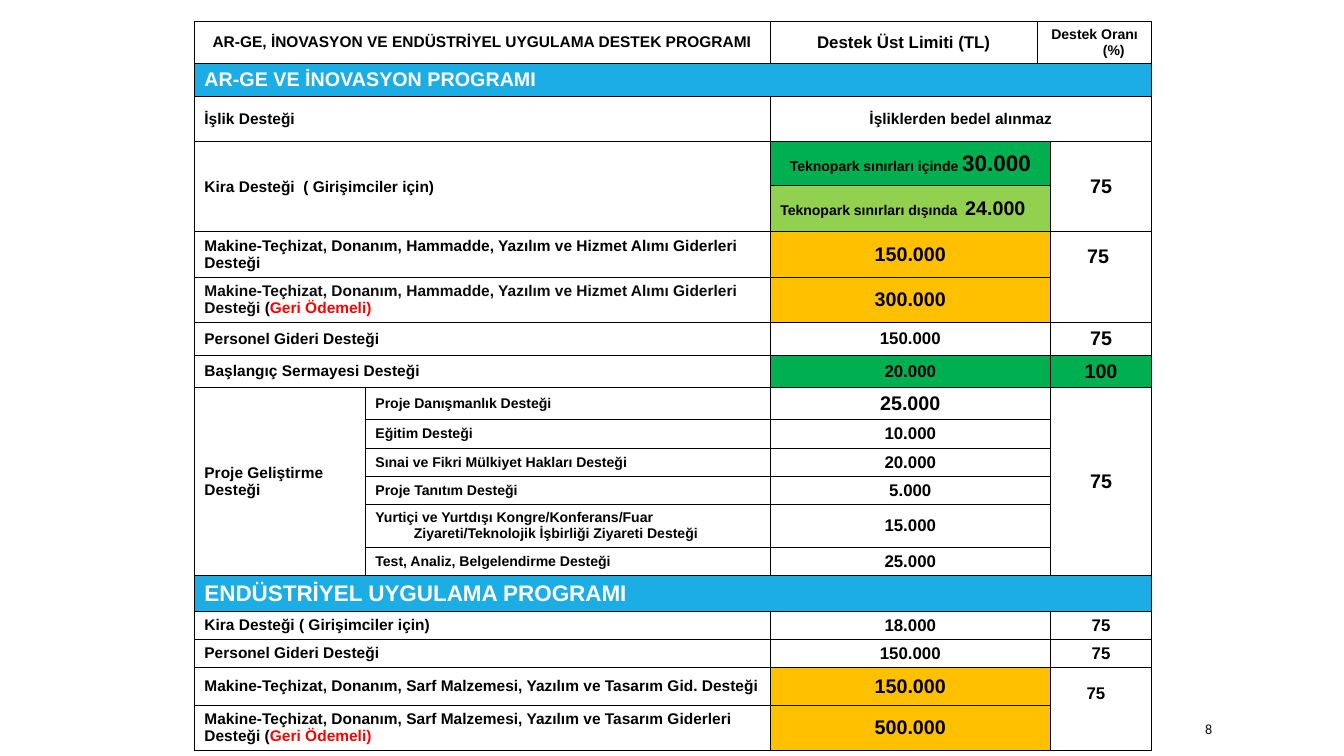
from dataclasses import dataclass

from lxml import etree
from pptx import Presentation
from pptx.dml.color import RGBColor
from pptx.enum.text import MSO_ANCHOR, PP_ALIGN
from pptx.oxml.ns import qn
from pptx.util import Inches, Pt

LEFT, CENTER = PP_ALIGN.LEFT, PP_ALIGN.CENTER
MIDDLE = MSO_ANCHOR.MIDDLE


@dataclass(frozen=True)
class Theme:
    font: str = "Arial"
    number_font: str = "Calibri"
    black: str = "000000"
    ink: str = "0D0D0D"
    white: str = "FFFFFF"
    red: str = "FF0000"
    blue: str = "1CADE4"
    green: str = "00B050"
    lime: str = "92D050"
    amber: str = "FFC000"
    small: int = 10
    label: int = 11
    normal: int = 12
    large: int = 14
    huge: int = 16


T = Theme()


@dataclass
class Run:
    text: str
    size: int = T.label
    color: str = T.black


@dataclass
class Cell:
    col: int
    paragraphs: list
    align: int = LEFT
    fill: str = ""
    rows: int = 1
    cols: int = 1
    pad_right: float = 0
    pad_bottom: float = 0


def label(*lines, rows=1, cols=2):
    """Left-hand name of a support; each line is a string or a list of runs."""
    return Cell(0, [[Run(x)] if isinstance(x, str) else x for x in lines], rows=rows, cols=cols)


def centred(col, text, size, **options):
    return Cell(col, [[Run(text, size)]], CENTER, **options)


def amount(text, size=T.normal, fill=""):
    return centred(2, text, size, fill=fill, cols=2)


def rate(text, size=T.large, **options):
    return centred(4, text, size, **options)


def banner(text, size):
    return Cell(0, [[Run(text, size, T.white)]], fill=T.blue, cols=5)


def item(text):
    """Entry of the project development group."""
    return Cell(1, [[Run(text, T.small)]])


COLS = [1.69, 4, 2.64, 0.13, 1]
MACHINES = "Makine-Teçhizat, Donanım, Hammadde, Yazılım ve Hizmet Alımı Giderleri"
MATERIALS = "Makine-Teçhizat, Donanım, Sarf Malzemesi, Yazılım ve Tasarım"
REPAID = Run("Geri Ödemeli)", color=T.red)

ROWS = [
    (0.42, [centred(0, "AR-GE, İNOVASYON VE ENDÜSTRİYEL UYGULAMA DESTEK PROGRAMI", T.label, cols=2),
            centred(2, "Destek Üst Limiti (TL)", T.normal),
            centred(3, "Destek Oranı (%)", T.small, cols=2)]),
    (0.32, [banner("AR-GE VE İNOVASYON PROGRAMI", T.large)]),
    (0.45, [label("İşlik Desteği"), centred(2, "İşliklerden bedel alınmaz", T.label, cols=3)]),
    (0.43, [label("Kira Desteği  ( Girişimciler için)", rows=2),
            Cell(2, [[Run("Teknopark sınırları içinde ", T.small), Run("30.000", T.huge)]],
                 CENTER, T.green, cols=2),
            rate("75", rows=2)]),
    (0.46, [Cell(2, [[Run("Teknopark sınırları dışında  ", T.small), Run("24.000", T.large)]],
                 fill=T.lime, cols=2)]),
    (0.45, [label(MACHINES, "Desteği"), amount("150.000", T.large, T.amber),
            rate("75", rows=2, pad_right=0.06, pad_bottom=0.4)]),
    (0.45, [label([Run(MACHINES, color=T.ink)], [Run("Desteği", color=T.ink), Run(" ("), REPAID]),
            amount("300.000", T.large, T.amber)]),
    (0.32, [label("Personel Gideri Desteği"), amount("150.000"), rate("75")]),
    (0.32, [label("Başlangıç Sermayesi Desteği"), amount("20.000", fill=T.green),
            rate("100", fill=T.green)]),
    (0.32, [label("Proje Geliştirme", "Desteği", rows=6, cols=1),
            item("Proje Danışmanlık Desteği"), amount("25.000", T.large), rate("75", rows=6)]),
    (0.28, [item("Eğitim Desteği"), amount("10.000")]),
    (0.28, [item("Sınai ve Fikri Mülkiyet Hakları Desteği"), amount("20.000")]),
    (0.28, [item("Proje Tanıtım Desteği"), amount("5.000")]),
    (0.42, [item("Yurtiçi ve Yurtdışı Kongre/Konferans/Fuar Ziyareti/Teknolojik İşbirliği "
                 "Ziyareti Desteği"), amount("15.000")]),
    (0.28, [item("Test, Analiz, Belgelendirme Desteği"), amount("25.000")]),
    (0.35, [banner("ENDÜSTRİYEL UYGULAMA PROGRAMI", T.huge)]),
    (0.28, [label("Kira Desteği ( Girişimciler için)"), amount("18.000"), rate("75", T.normal)]),
    (0.28, [label("Personel Gideri Desteği"), amount("150.000"), rate("75", T.normal)]),
    (0.37, [label(MATERIALS + " Gid. Desteği"), amount("150.000", T.large, T.amber),
            rate("75", T.normal, rows=2, pad_right=0.1, pad_bottom=0.3)]),
    (0.45, [label(MATERIALS + " Giderleri", [Run("Desteği ("), REPAID]),
            amount("500.000", T.large, T.amber)]),
]


def add_run(p, text, size, color, font, bold):
    r = p.add_run()
    r.text = text
    r.font.size, r.font.name, r.font.bold = Pt(size), font, bold
    r.font.color.rgb = RGBColor.from_string(color)


def set_borders(cell):
    tc_pr = cell._tc.get_or_add_tcPr()
    for side in "LRTB":
        ln = etree.SubElement(tc_pr, qn(f"a:ln{side}"), w=str(Pt(0.75)))
        fill = etree.SubElement(ln, qn("a:solidFill"))
        etree.SubElement(fill, qn("a:srgbClr"), val=T.black)


def fill_cell(cell, content):
    cell.vertical_anchor = MIDDLE
    cell.margin_left, cell.margin_top = Inches(0.1), Inches(0.04)
    cell.margin_right = Inches(0.1 + content.pad_right)
    cell.margin_bottom = Inches(0.04 + content.pad_bottom)
    if content.fill:
        cell.fill.solid()
        cell.fill.fore_color.rgb = RGBColor.from_string(content.fill)
    tf = cell.text_frame
    for i, runs in enumerate(content.paragraphs):
        p = tf.add_paragraph() if i else tf.paragraphs[0]
        p.alignment = content.align
        p_pr = p._p.get_or_add_pPr()
        p_pr.set("marL", str(Inches(0.38)))
        p_pr.set("indent", str(-Inches(0.38)))
        for run in runs:
            add_run(p, run.text, run.size, run.color, T.font, True)


def add_support_table(slide, left, top):
    width, height = sum(COLS), sum(h for h, _ in ROWS)
    table = slide.shapes.add_table(len(ROWS), len(COLS), Inches(left), Inches(top),
                                   Inches(width), Inches(height)).table
    table.first_row = table.horz_banding = False
    for column, w in zip(table.columns, COLS):
        column.width = Inches(w)
    for cell in table.iter_cells():
        set_borders(cell)
        cell.fill.background()
    for i, (h, contents) in enumerate(ROWS):
        table.rows[i].height = Inches(h)
        for c in contents:
            cell = table.cell(i, c.col)
            if c.rows * c.cols > 1:
                cell.merge(table.cell(i + c.rows - 1, c.col + c.cols - 1))
            fill_cell(cell, c)


def add_page_number(slide, left, top, width, height):
    sp = slide.shapes.add_textbox(Inches(left), Inches(top), Inches(width), Inches(height))
    tf = sp.text_frame
    tf.word_wrap = True
    tf.vertical_anchor = MIDDLE
    add_run(tf.paragraphs[0], "8", T.small, T.ink, T.number_font, False)


def main():
    prs = Presentation()
    prs.slide_width, prs.slide_height = Inches(13.28), Inches(7.47)
    slide = prs.slides.add_slide(prs.slide_layouts[6])
    add_page_number(slide, 11.81, 7.05, 1.06, 0.3)
    add_support_table(slide, 1.92, 0.21)
    prs.save("out.pptx")


if __name__ == "__main__":
    main()
